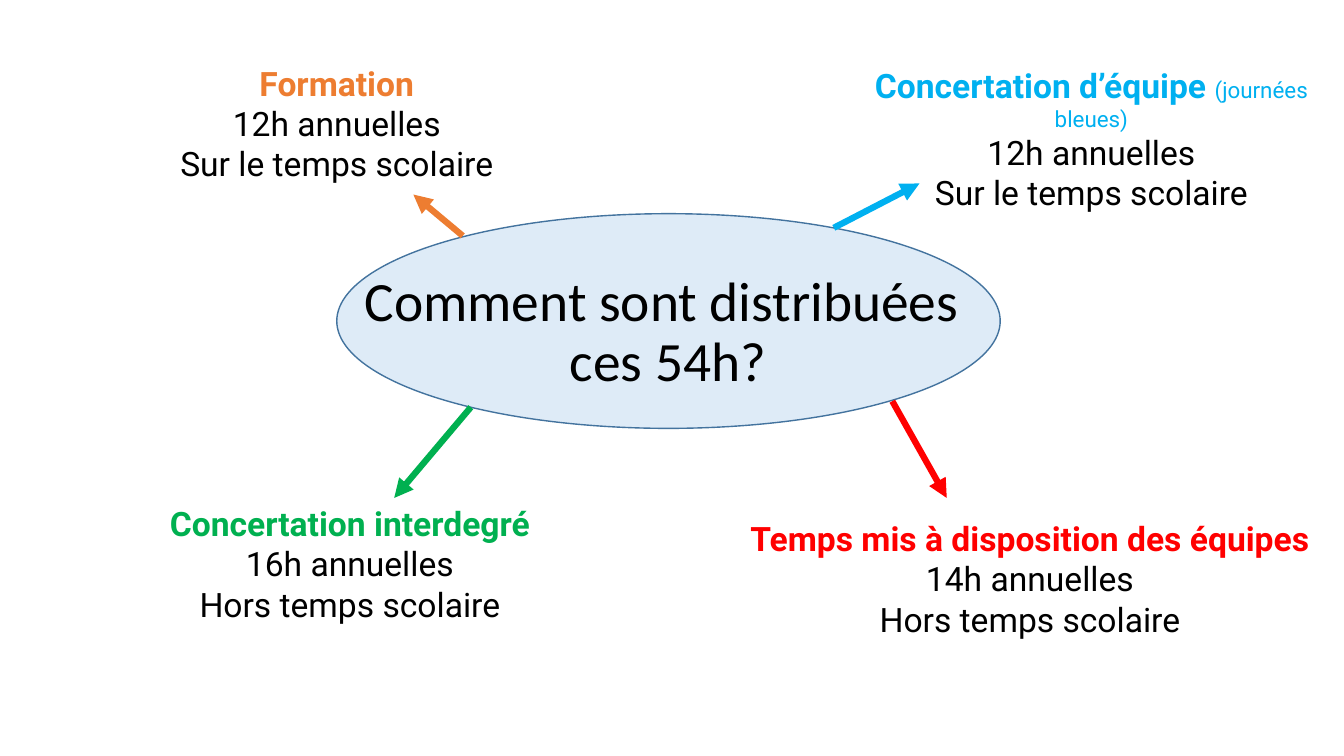
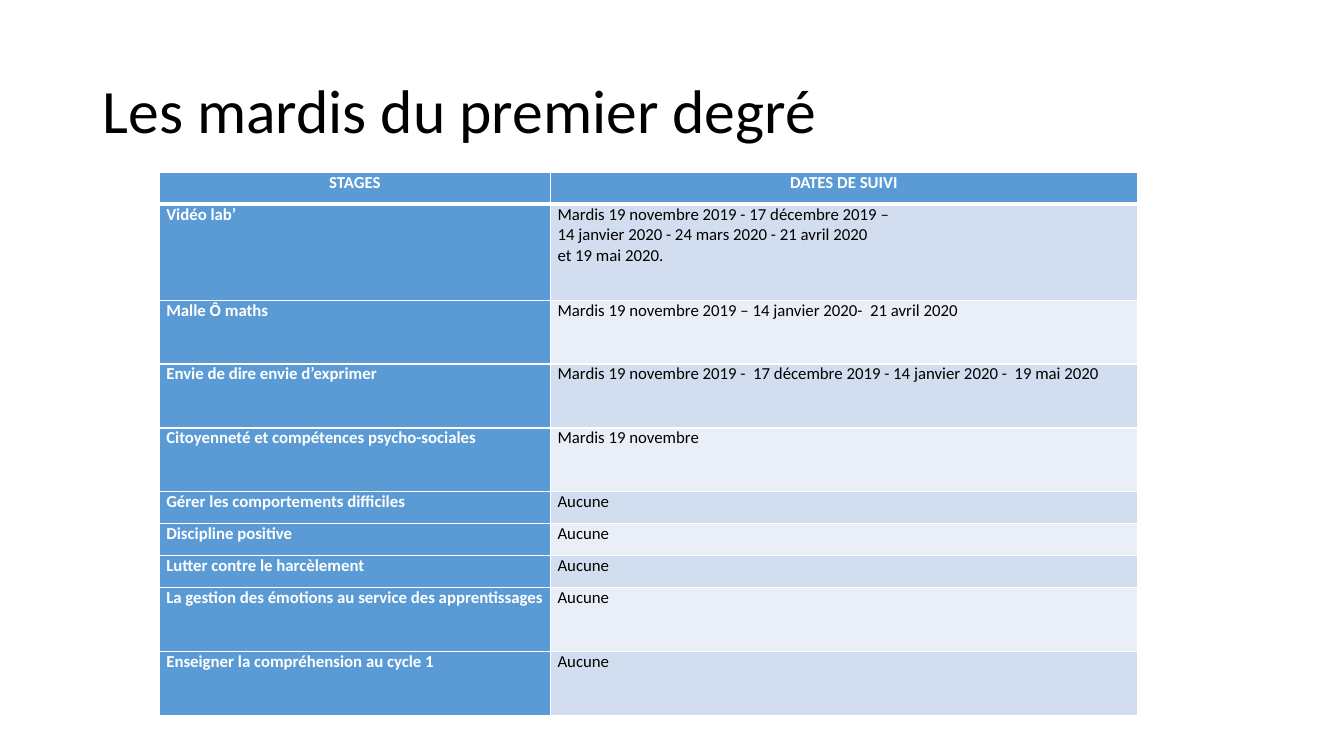
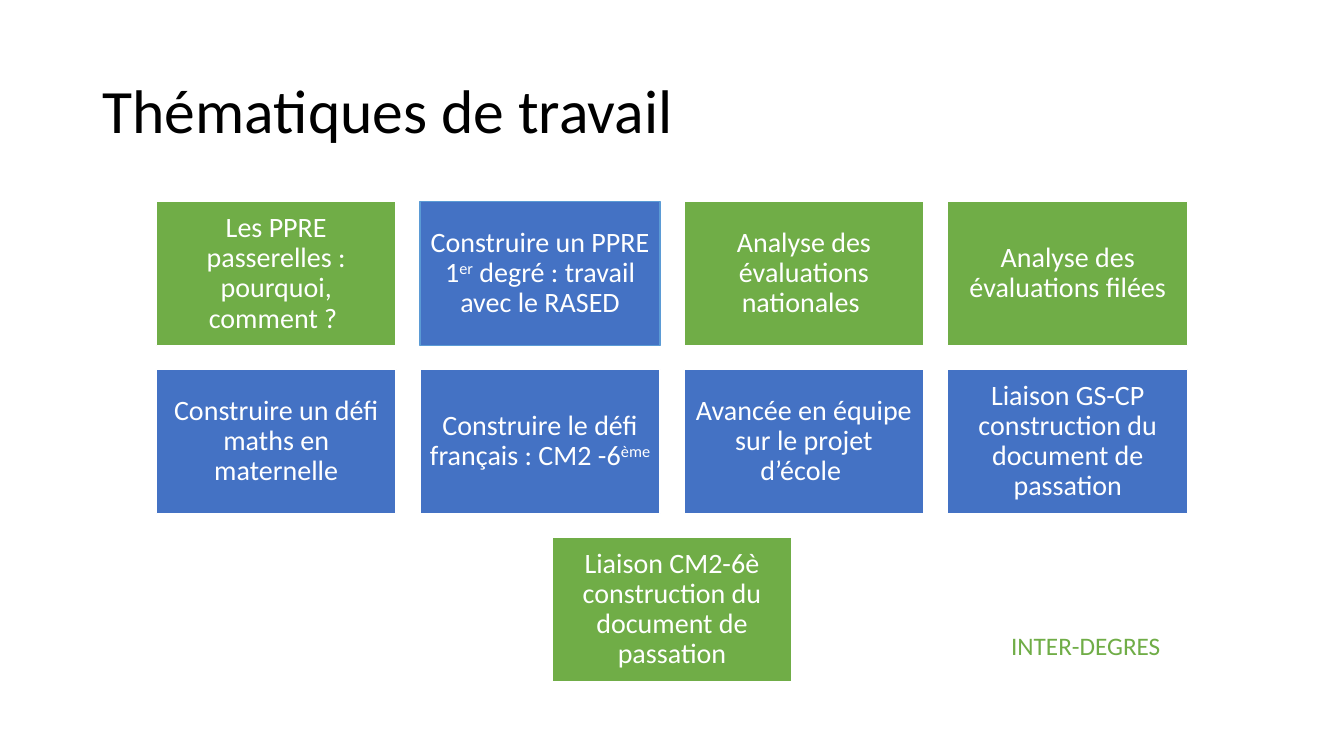
from lxml import etree
from pptx import Presentation
from pptx.dml.color import RGBColor
from pptx.enum.shapes import MSO_CONNECTOR, MSO_SHAPE
from pptx.enum.text import MSO_ANCHOR, PP_ALIGN
from pptx.oxml.ns import qn
from pptx.util import Inches, Pt

LEFT, CENTER = PP_ALIGN.LEFT, PP_ALIGN.CENTER
TOP, MIDDLE = MSO_ANCHOR.TOP, MSO_ANCHOR.MIDDLE
RECT, OVAL = MSO_SHAPE.RECTANGLE, MSO_SHAPE.OVAL
STRAIGHT = MSO_CONNECTOR.STRAIGHT

BLACK = RGBColor(0, 0, 0)
WHITE = RGBColor(0xFF, 0xFF, 0xFF)
ORANGE = RGBColor(0xED, 0x7D, 0x31)
SKY = RGBColor(0x00, 0xB0, 0xF0)
GREEN = RGBColor(0x00, 0xB0, 0x50)
RED = RGBColor(0xFF, 0x00, 0x00)
PALE = RGBColor(0xDE, 0xEB, 0xF7)
NAVY = RGBColor(0x43, 0x73, 0x9E)
BLUE = RGBColor(0x5B, 0x9B, 0xD5)
BANDS = RGBColor(0xD2, 0xDE, 0xEF), RGBColor(0xEA, 0xEF, 0xF7)
LEAF = RGBColor(0x70, 0xAD, 0x47)
ROYAL = RGBColor(0x44, 0x72, 0xC4)

BODY, ACCENT = "Calibri", "Roboto"
TITLE_BOX = 0.92, 0.4, 11.5, 1.45

# box, arrow start and end, colour, heading, aside, hours, when
TOPICS = [
    ((8.36, 0.59, 4.93, 2.12), (8.27, 2.26, 9.12, 1.82), SKY,
     "Concertation d’équipe ", "(journées bleues)", "12h annuelles", "Sur le temps scolaire"),
    ((1.34, 0.57, 4, 1.72), (4.59, 2.34, 4.1, 1.93), ORANGE,
     "Formation", "", "12h annuelles", "Sur le temps scolaire"),
    ((0.85, 4.94, 5.24, 1.72), (4.67, 4.04, 3.91, 4.94), GREEN,
     "Concertation interdegré", "", "16h annuelles", "Hors temps scolaire"),
    ((7.26, 5.09, 5.91, 1.72), (8.85, 3.98, 9.39, 4.94), RED,
     "Temps mis à disposition des équipes", "", "14h annuelles", "Hors temps scolaire"),
]

# height in row units, course, dates
COURSES = [
    (1, "STAGES", ["DATES DE SUIVI"]),
    (3, "Vidéo lab’", ["Mardis 19 novembre 2019 - 17 décembre 2019 –",
                       "14 janvier 2020 - 24 mars 2020 - 21 avril 2020",
                       "et 19 mai 2020."]),
    (2, "Malle Ô maths", ["Mardis 19 novembre 2019 – 14 janvier 2020-  21 avril 2020"]),
    (2, "Envie de dire envie d’exprimer",
     ["Mardis 19 novembre 2019 -  17 décembre 2019 - 14 janvier 2020 -  19 mai 2020"]),
    (2, "Citoyenneté et compétences psycho-sociales", ["Mardis 19 novembre"]),
    (1, "Gérer les comportements difficiles", ["Aucune"]),
    (1, "Discipline positive", ["Aucune"]),
    (1, "Lutter contre le harcèlement", ["Aucune"]),
    (2, "La gestion des émotions au service des apprentissages", ["Aucune"]),
    (2, "Enseigner la compréhension au cycle 1", ["Aucune"]),
]

# fill, line, text, raised text
THEMES = [
    [(LEAF, WHITE, "Les PPRE passerelles : pourquoi, comment ? ", ""),
     (ROYAL, BLUE, "Construire un PPRE 1|er| degré : travail avec le RASED", "er"),
     (LEAF, WHITE, "Analyse des évaluations nationales ", ""),
     (LEAF, WHITE, "Analyse des évaluations filées", "")],
    [(ROYAL, WHITE, "Construire un défi maths en maternelle", ""),
     (ROYAL, WHITE, "Construire le défi français : CM2 -6|ème ", "ème "),
     (ROYAL, WHITE, "Avancée en équipe sur le projet d’école ", ""),
     (ROYAL, WHITE, "Liaison GS-CP construction du document de passation", "")],
    [(LEAF, WHITE, "Liaison CM2-6è construction du document de passation", "")],
]


def inches(box):
    return [Inches(v) for v in box]


def style(para, size, color, bold=False, face=BODY, align=LEFT):
    para.alignment = align
    font = para.font
    font.name, font.size, font.bold = face, Pt(size), bold
    font.color.rgb = color


def add_text(slide, box, anchor=TOP):
    frame = slide.shapes.add_textbox(*inches(box)).text_frame
    frame.word_wrap = True
    frame.vertical_anchor = anchor
    return frame


def add_title(slide, text, box=TITLE_BOX, size=44, align=LEFT):
    para = add_text(slide, box, MIDDLE).paragraphs[0]
    para.text = text
    para.line_spacing = 0.9
    style(para, size, BLACK, align=align)


def add_form(slide, kind, box, fill, line):
    form = slide.shapes.add_shape(kind, *inches(box))
    form.shadow.inherit = False
    form.fill.solid()
    form.fill.fore_color.rgb = fill
    form.line.color.rgb = line
    form.line.width = Pt(1)
    return form


def add_arrow(slide, ends, color):
    arrow = slide.shapes.add_connector(STRAIGHT, *inches(ends))
    arrow.line.color.rgb = color
    arrow.line.width = Pt(4.5)
    etree.SubElement(arrow.line._get_or_add_ln(), qn("a:tailEnd"), type="triangle")
    etree.SubElement(arrow._element.spPr, qn("a:effectLst"))


def add_topic(slide, box, color, head, aside, hours, when):
    frame = add_text(slide, box)
    para = frame.paragraphs[0]
    para.add_run().text = head
    style(para, 24, color, True, ACCENT, CENTER)
    if aside:
        run = para.add_run()
        run.text = aside
        run.font.size, run.font.bold = Pt(16), False
    for text in (hours, when):
        para = frame.add_paragraph()
        para.text = text
        style(para, 24, BLACK, False, ACCENT, CENTER)


def hours_slide(slide):
    add_form(slide, OVAL, (3.34, 2.12, 6.58, 2.13), PALE, NAVY)
    add_title(slide, "Comment sont distribuées \nces 54h?",
              (2.85, 2.69, 7.55, 1.23), 39.6, CENTER)
    for box, ends, color, *words in TOPICS:
        add_arrow(slide, ends, color)
        add_topic(slide, box, color, *words)


def set_edges(cell, top, base):
    """Draw white cell borders, with top and base widths in points."""
    props = cell._tc.get_or_add_tcPr()
    for side, width in (("L", 1), ("R", 1), ("T", top), ("B", base)):
        edge = etree.SubElement(props, qn("a:ln" + side), w=str(Pt(width)))
        fill = etree.SubElement(edge, qn("a:solidFill"))
        etree.SubElement(fill, qn("a:srgbClr"), val=str(WHITE))


def fill_cell(cell, lines, fill, color, bold, align):
    cell.margin_left = cell.margin_right = Inches(0.07)
    cell.margin_top = cell.margin_bottom = 0
    cell.fill.solid()
    cell.fill.fore_color.rgb = fill
    cell.text = "\n".join(lines)
    for para in cell.text_frame.paragraphs:
        style(para, 12, color, bold, align=align)


def add_courses(slide, left, top, widths, height):
    unit = height / sum(row[0] for row in COURSES)
    box = inches((left, top, sum(widths), height))
    table = slide.shapes.add_table(len(COURSES), len(widths), *box).table
    table.first_row = table.horz_banding = False
    for col, width in zip(table.columns, widths):
        col.width = Inches(width)
    for r, (units, course, dates) in enumerate(COURSES):
        table.rows[r].height = Inches(units * unit)
        for c, lines in enumerate(([course], dates)):
            cell = table.cell(r, c)
            set_edges(cell, 3 if r == 1 else 1, 3 if r == 0 else 1)
            strong = r == 0 or c == 0
            fill_cell(cell, lines, BLUE if strong else BANDS[(r - 1) % 2],
                      WHITE if strong else BLACK, strong, LEFT if r else CENTER)


def dates_slide(slide):
    add_title(slide, "Les mardis du premier degré")
    add_courses(slide, 1.58, 1.71, (3.88, 5.82), 5.39)


def add_tile(slide, box, fill, line, text, raised):
    tile = add_form(slide, RECT, box, fill, line)
    frame = tile.text_frame
    frame.word_wrap = True
    frame.vertical_anchor = MIDDLE
    frame.margin_left = frame.margin_right = Inches(0.08)
    frame.margin_top = frame.margin_bottom = Inches(0.08)
    para = frame.paragraphs[0]
    para.line_spacing = 0.9
    style(para, 20, WHITE, align=CENTER)
    for part in text.split("|"):
        run = para.add_run()
        run.text = part
        if part == raised:
            run._r.get_or_add_rPr().set("baseline", "30000")


def add_tiles(slide, left, top, width):
    """Lay the themes out in rows, each centred in the given width."""
    wide, high, gap = 2.38, 1.43, 0.24
    step = wide + gap - 0.003
    for r, row in enumerate(THEMES):
        start = left + (width - wide - step * (len(row) - 1)) / 2
        for c, theme in enumerate(row):
            box = start + c * step, top + r * (high + gap - 0.005), wide, high
            add_tile(slide, box, *theme)


def themes_slide(slide):
    add_title(slide, "Thématiques de travail")
    add_tiles(slide, 1.55, 2, 10.23)
    para = add_text(slide, (9.93, 6.2, 2.49, 0.4)).paragraphs[0]
    para.text = "INTER-DEGRES"
    style(para, 18, LEAF)


def main():
    deck = Presentation()
    deck.slide_width, deck.slide_height = Inches(13.33), Inches(7.5)
    for build in (hours_slide, dates_slide, themes_slide):
        build(deck.slides.add_slide(deck.slide_layouts[6]))
    deck.save("out.pptx")


if __name__ == "__main__":
    main()
